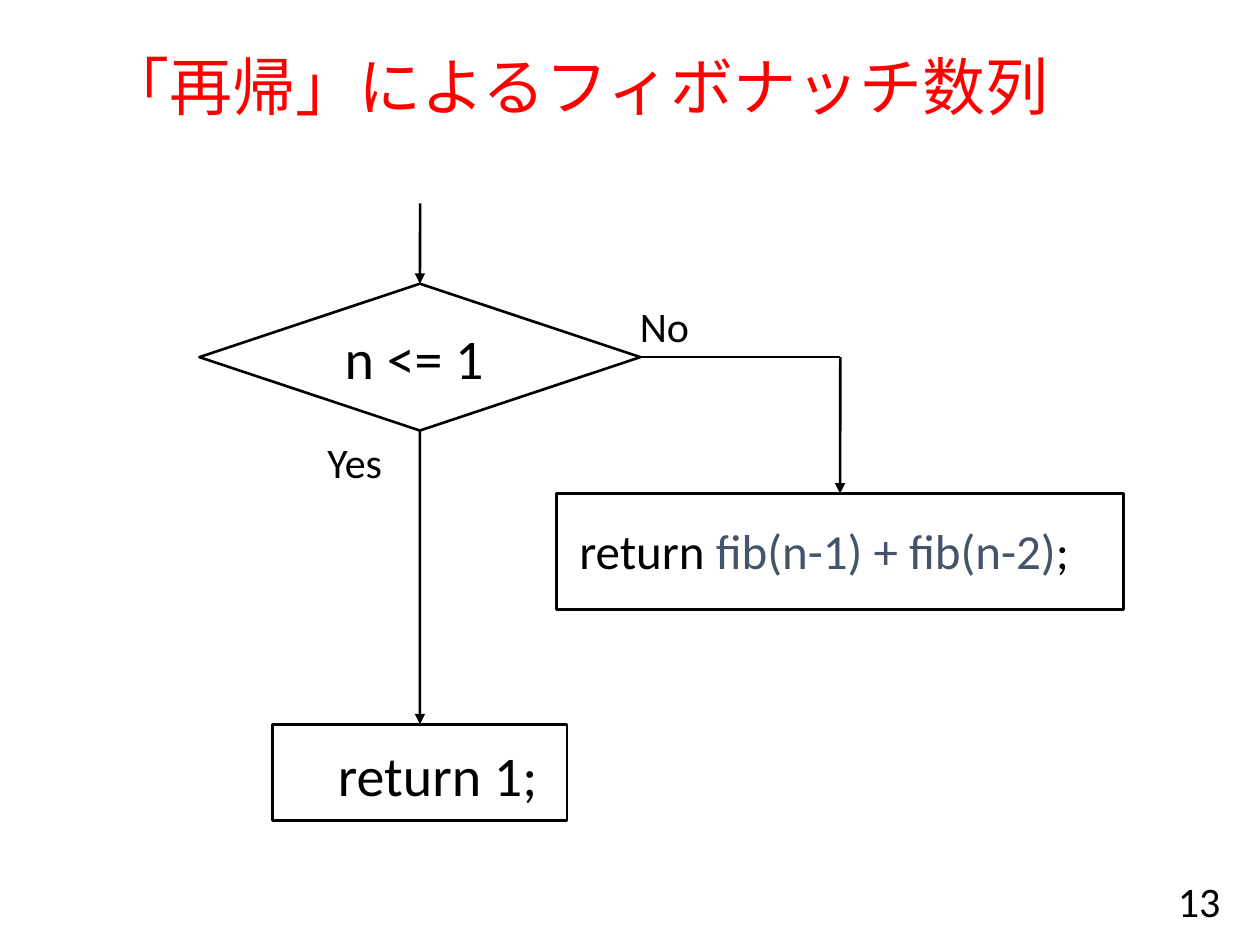
from lxml import etree
from pptx import Presentation
from pptx import util as u
from pptx.dml.color import RGBColor
from pptx.enum import shapes, text
from pptx.oxml.ns import qn

BLACK = RGBColor(0x00, 0x00, 0x00)
RED = RGBColor(0xFF, 0x00, 0x00)
SLATE = RGBColor(0x44, 0x54, 0x6A)


class Chart:
    """Style and current slide of the flow chart."""
    font = "Calibri"
    width = u.Pt(1.5)

    def __init__(self, slide):
        self.slide = slide

    def fill_in(self, frame, runs, size, font=None, align=text.PP_ALIGN.LEFT):
        par = frame.paragraphs[0]
        par.alignment = align
        for words, color in runs:
            run = par.add_run()
            run.text = words
            run.font.size = u.Pt(size)
            run.font.name = font or self.font
            run.font.color.rgb = color
        return par

    def title(self, words, box):
        shape = self.slide.shapes.title
        shape.left, shape.top, shape.width, shape.height = map(u.Cm, box)
        frame = shape.text_frame
        frame.auto_size = text.MSO_AUTO_SIZE.NONE
        frame.vertical_anchor = text.MSO_ANCHOR.MIDDLE
        self.fill_in(frame, [(words, RED)], 36, "Arial").line_spacing = 0.9

    def node(self, kind, box):
        shape = self.slide.shapes.add_shape(kind, *map(u.Cm, box))
        shape.shadow.inherit = False
        shape.fill.background()
        shape.line.color.rgb = BLACK
        shape.line.width = self.width
        return shape

    def label(self, runs, box, size, wrap=False, align=text.PP_ALIGN.LEFT,
              anchor=text.MSO_ANCHOR.TOP):
        frame = self.slide.shapes.add_textbox(*map(u.Cm, box)).text_frame
        frame.word_wrap = wrap
        frame.vertical_anchor = anchor
        self.fill_in(frame, runs, size, align=align)

    def link(self, start, end, arrow=True, source=None, target=None):
        """Draw a line; source and target are (shape, side) pairs."""
        line = self.slide.shapes.add_connector(
            shapes.MSO_CONNECTOR.STRAIGHT, *map(u.Cm, start + end))
        if source:
            line.begin_connect(*source)
        if target:
            line.end_connect(*target)
        line.line.color.rgb = BLACK
        line.line.width = self.width
        props = line._element.spPr
        if arrow:
            etree.SubElement(props.find(qn("a:ln")), qn("a:tailEnd"),
                             type="triangle")
        etree.SubElement(props, qn("a:effectLst"))


def main():
    deck = Presentation()
    deck.slide_width, deck.slide_height = u.Cm(25.4), u.Cm(19.05)
    chart = Chart(deck.slides.add_slide(deck.slide_layouts[5]))
    chart.title("「再帰」によるフィボナッチ数列", (1.9, 0.43, 21.6, 2.77))

    # Nodes
    test = chart.node(shapes.MSO_SHAPE.FLOWCHART_DECISION,
                      (4.02, 5.72, 8.89, 2.96))
    base = chart.node(shapes.MSO_SHAPE.RECTANGLE, (5.5, 14.6, 5.93, 1.94))
    step = chart.node(shapes.MSO_SHAPE.RECTANGLE, (11.22, 9.95, 11.43, 2.34))

    # Flow: entry, yes branch, no branch
    mid, turn = 8.47, (16.94, 7.2)
    chart.link((mid, 4.1), (mid, 5.72), target=(test, 0))
    chart.link((mid, 8.68), (mid, 14.6), source=(test, 2), target=(base, 0))
    chart.link((12.91, 7.2), turn, arrow=False, source=(test, 3))
    chart.link(turn, (16.94, 9.95), target=(step, 0))

    # Wording
    chart.label([("n <= 1", BLACK)], (6.7, 6.4, 3.48, 1.6), 32)
    chart.label([("No", BLACK)], (12.65, 5.94, 1.55, 1.27), 24)
    chart.label([("Yes", BLACK)], (6.35, 8.68, 1.63, 1.27), 24)
    chart.label([("return 1;", BLACK)], (6.56, 14.8, 5.5, 1.6), 32, True)
    chart.label([("return ", BLACK), ("fib(n-1) + fib(n-2)", SLATE),
                 (";", BLACK)], (11.43, 10.37, 11.64, 1.45), 28, True)

    # Page number
    chart.label([("13", BLACK)], (19.13, 17.65, 5.72, 1.02), 24, True,
                text.PP_ALIGN.RIGHT, text.MSO_ANCHOR.MIDDLE)
    deck.save("out.pptx")


if __name__ == "__main__":
    main()
